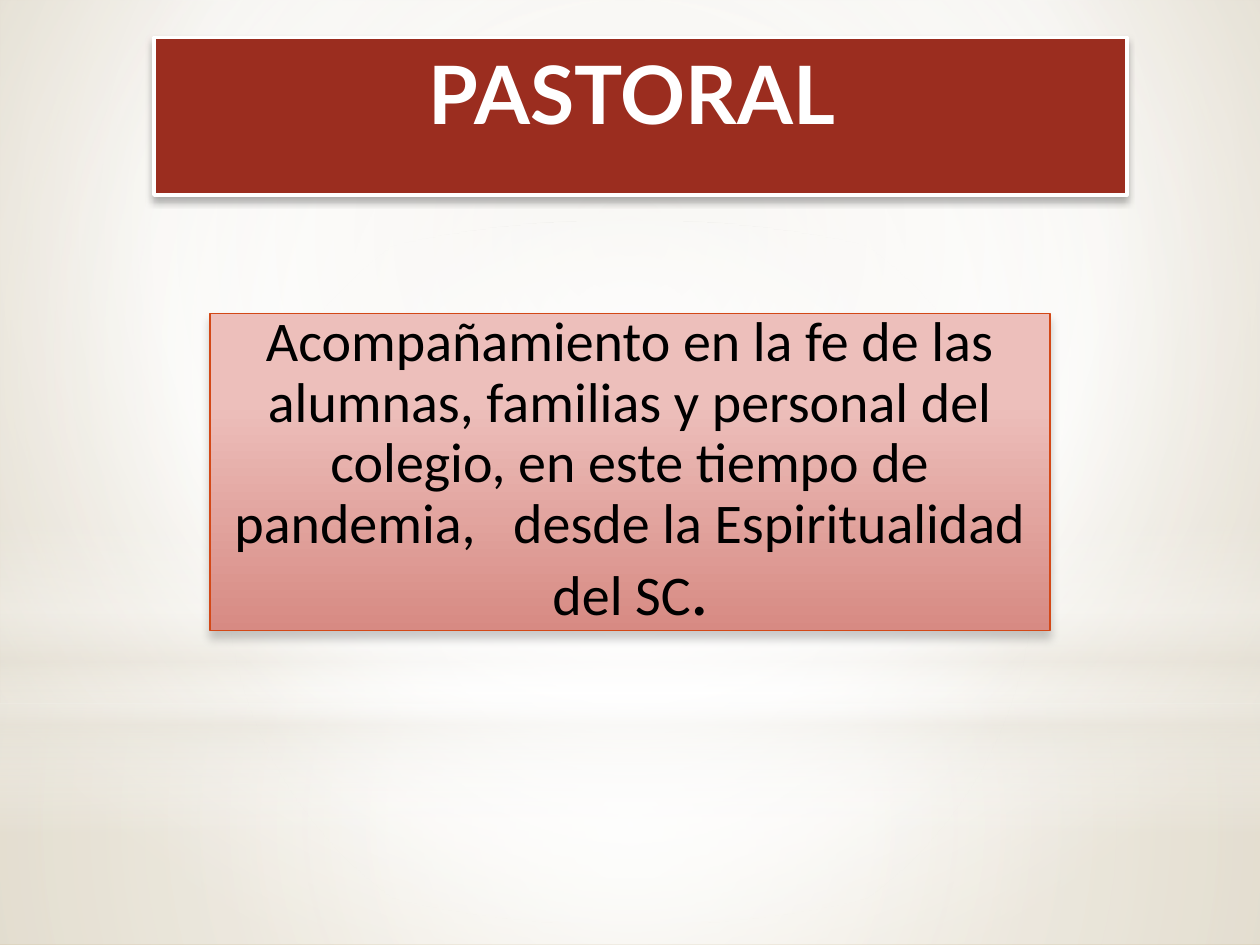
import pptx
import pptx.util
import pptx.dml.color
import pptx.enum.shapes
import pptx.enum.text
from lxml import etree
from pptx.oxml.ns import qn

Pt = pptx.util.Pt
SHAPE = pptx.enum.shapes.MSO_SHAPE
ANCHOR = pptx.enum.text.MSO_ANCHOR
WIDTH, HEIGHT = 720, 540
CENTER = (50, 50, 50, 50)


def rgb(value):
    return pptx.dml.color.RGBColor.from_string(value)


def add_color(parent, value, alpha=100):
    clr = etree.SubElement(parent, qn("a:srgbClr"), val=value)
    if alpha < 100:
        etree.SubElement(clr, qn("a:alpha"), val=str(alpha * 1000))


class Deck:
    text_font, accent_font = "Calibri", "Lato"
    red, white, black = "9B2D1F", "FFFFFF", "000000"
    cream, orange = "E9E5DC", "D34817"

    def __init__(self):
        self.prs = pptx.Presentation()
        self.prs.slide_width, self.prs.slide_height = Pt(WIDTH), Pt(HEIGHT)
        self.s = self.prs.slides.add_slide(self.prs.slide_layouts[6])

    def gradient(self, owner, stops, focus=None):
        """Stops are (position, colour, opacity); focus makes it radial."""
        (owner.background if owner is self.s else owner).fill.gradient()
        grad = owner._element.find(".//" + qn("a:gradFill"))
        grad.clear()
        gs_lst = etree.SubElement(grad, qn("a:gsLst"))
        for pos, color, alpha in stops:
            gs = etree.SubElement(gs_lst, qn("a:gs"), pos=str(pos * 1000))
            add_color(gs, color, alpha)
        if focus:
            circle = etree.SubElement(grad, qn("a:path"), path="circle")
            sides = {k: str(v * 1000) for k, v in zip("ltrb", focus)}
            etree.SubElement(circle, qn("a:fillToRect"), **sides)
        else:
            etree.SubElement(grad, qn("a:lin"), ang="5400000", scaled="0")

    def shape(self, box, fill, focus=None, line=None, kind=SHAPE.RECTANGLE):
        sp = self.s.shapes.add_shape(kind, *map(Pt, box))
        sp.shadow.inherit = False
        if isinstance(fill, str):
            sp.fill.solid()
            sp.fill.fore_color.rgb = rgb(fill)
        else:
            self.gradient(sp, fill, focus)
        if line:
            sp.line.color.rgb, sp.line.width = rgb(line[0]), Pt(line[1])
        else:
            sp.line.fill.background()
        return sp

    def shadow(self, sp, alpha, blur, dist, angle):
        effects = sp._element.spPr.find(qn("a:effectLst"))
        outer = etree.SubElement(
            effects, qn("a:outerShdw"), blurRad=str(Pt(blur)), dist=str(Pt(dist)),
            dir=str(angle * 60000), algn="ctr", rotWithShape="0")
        add_color(outer, self.black, alpha)

    def textbox(self, box):
        return self.s.shapes.add_textbox(*map(Pt, box))

    def text(self, sp, runs, color, anchor, inset=None, spacing=None):
        """Runs are (text, font, size, bold, letter spacing)."""
        tf = sp.text_frame
        tf.word_wrap, tf.vertical_anchor = True, anchor
        if inset:
            tf.margin_left = tf.margin_right = Pt(inset)
            tf.margin_top = tf.margin_bottom = Pt(inset)
        p = tf.paragraphs[0]
        p.alignment = pptx.enum.text.PP_ALIGN.CENTER
        p.font.color.rgb = rgb(color)
        if spacing:
            p.line_spacing = spacing
        for text, font, size, bold, tracking in runs:
            r = p.add_run()
            r.text = text
            r.font.name, r.font.size, r.font.bold = font, Pt(size), bold
            r.font.color.rgb = rgb(color)
            if tracking:
                r.font._element.set("spc", str(tracking * 100))


def main():
    d = Deck()
    white, cream = d.white, d.cream

    # Background with layers of soft light
    d.gradient(d.s, [(0, "E3DDCF", 100), (60, white, 100), (100, "CDBF9F", 100)],
               (20, 10, 20, 60))
    horizon = 402
    d.shape((0, horizon, WIDTH, HEIGHT - horizon),
            [(0, white, 91), (37, white, 76), (100, cream, 79)], CENTER)
    d.shape((0, 0, WIDTH, horizon),
            [(0, white, 89), (48, white, 62), (100, cream, 79)], CENTER)
    d.shape((0, 297, WIDTH, 180),
            [(0, white, 0), (29, white, 30), (45, cream, 40),
             (55, white, 26), (65, cream, 60), (100, white, 0)])
    d.shape((0, 126, WIDTH, horizon), [(0, white, 100), (56, white, 0)],
            CENTER, kind=SHAPE.OVAL)

    # Title
    title = d.shape((88, 21.5, 556, 90), d.red, line=(white, 2))
    d.shadow(title, 30, 4, 3, 100)
    d.text(title, [("PASTORAL ", d.accent_font, 46, True, 0)], white, ANCHOR.TOP)

    # Message panel
    panel = (120, 179, 480, 181.5)
    card = d.shape(panel, [(28, "EDBFBB", 100), (100, "D78A83", 100)],
                   line=(d.orange, 0.75))
    d.shadow(card, 20, 5, 4, 90)
    body = (d.text_font, 32, False)
    d.text(d.textbox(panel), [
        ("Acompañamiento en la fe de las alumnas, familias y personal del "
         "colegio, en este tiempo de pandemia,", *body, 0),
        (" ", *body, 14),
        ("desde la Espiritualidad del SC", *body, 0),
        (".", d.accent_font, 40, False, 0),
    ], d.black, ANCHOR.MIDDLE, inset=9.5, spacing=0.9)

    d.prs.save("out.pptx")


if __name__ == "__main__":
    main()
